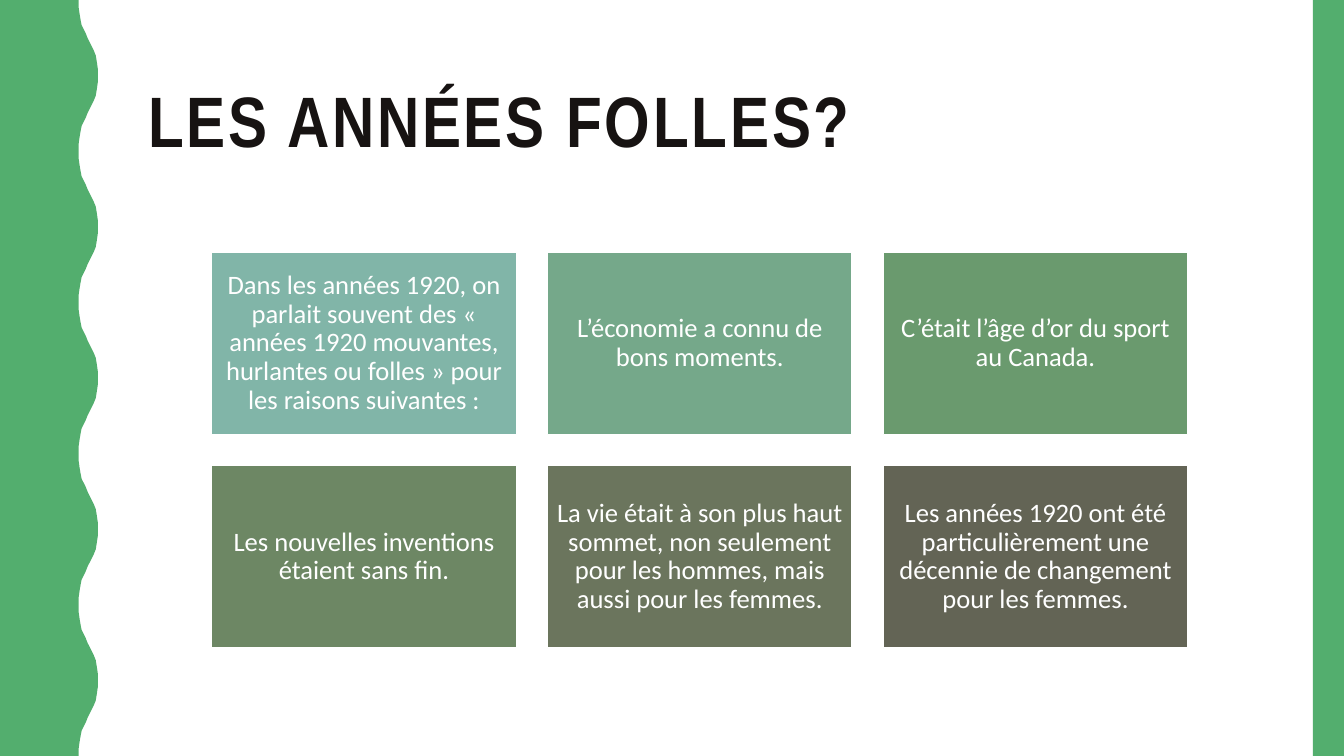
import dataclasses

import pptx
import pptx.dml.color
import pptx.enum.shapes
import pptx.enum.text
import pptx.util

PX = 9144  # EMU per px, 100 px to the inch
SLIDE_WIDTH, SLIDE_HEIGHT = 1333, 750

COLORS = {
    "white": "FFFFFF",
    "ink": "171312",
    "green": "53AE6E",
    "card_1": "81B5A8",
    "card_2": "75A88A",
    "card_3": "6A9A6E",
    "card_4": "6D8764",
    "card_5": "6B755D",
    "card_6": "636455",
}

# Card grid
COLUMNS = 3
CARD_LEFT, CARD_TOP = 210, 250
CARD_WIDTH, CARD_HEIGHT = 302, 181
CARD_GAP = 31
CARD_INSET = 8

# Wavy edge: (x, y) points from trough to crest, mirrored for the way back
WAVE_COUNT = 5
WAVE_PERIOD = 150
HALF_WAVE = [
    (78, 0), (78, 7), (79, 14), (80, 20), (81, 25), (83, 29), (85, 33), (87, 38),
    (89, 42), (91, 46), (93, 50), (95, 55), (96, 61), (97, 68), (97, 75),
]


@dataclasses.dataclass(frozen=True)
class Card:
    text: str
    color: str


CARDS = [
    Card("Dans les années 1920, on parlait souvent des « années 1920 mouvantes, "
         "hurlantes ou folles » pour les raisons suivantes :", "card_1"),
    Card("L’économie a connu de bons moments.", "card_2"),
    Card("C’était l’âge d’or du sport au Canada.", "card_3"),
    Card("Les nouvelles inventions étaient sans fin.", "card_4"),
    Card("La vie était à son plus haut sommet, non seulement pour les hommes, "
         "mais aussi pour les femmes.", "card_5"),
    Card("Les années 1920 ont été particulièrement une décennie de changement "
         "pour les femmes.", "card_6"),
]


def px(length: int) -> pptx.util.Emu:
    return pptx.util.Emu(length * PX)


def rgb(name: str) -> pptx.dml.color.RGBColor:
    return pptx.dml.color.RGBColor.from_string(COLORS[name])


def paint(shape, color: str) -> None:
    shape.shadow.inherit = False
    shape.fill.solid()
    shape.fill.fore_color.rgb = rgb(color)
    shape.line.fill.background()


def add_rectangle(slide, left: int, top: int, width: int, height: int, color: str):
    shape = slide.shapes.add_shape(
        pptx.enum.shapes.MSO_SHAPE.RECTANGLE, px(left), px(top), px(width), px(height))
    paint(shape, color)
    return shape


def write(shape, text: str, font_name: str, size: int, color: str, alignment):
    frame = shape.text_frame
    frame.word_wrap = True
    frame.auto_size = pptx.enum.text.MSO_AUTO_SIZE.NONE
    frame.vertical_anchor = pptx.enum.text.MSO_ANCHOR.MIDDLE
    paragraph = frame.paragraphs[0]
    paragraph.alignment = alignment
    paragraph.line_spacing = 0.9
    run = paragraph.add_run()
    run.text = text
    run.font.name = font_name
    run.font.size = pptx.util.Pt(size)
    run.font.color.rgb = rgb(color)
    return run


def add_title(slide, text: str) -> None:
    title = slide.shapes.title
    title.left, title.top, title.width, title.height = px(137), px(42), px(1113), px(163)
    run = write(title, text, "Arial Narrow", 51, "ink", pptx.enum.text.PP_ALIGN.LEFT)
    run.font.bold = True
    run.font._element.set("spc", "200")  # letter spacing, hundredths of a point


def add_wavy_band(slide) -> None:
    wave = HALF_WAVE + [(x, WAVE_PERIOD - y) for x, y in reversed(HALF_WAVE[:-1])]
    edge = [(x, y + WAVE_PERIOD * i) for i in range(WAVE_COUNT) for x, y in wave]
    builder = slide.shapes.build_freeform(0, 0, scale=PX)
    builder.add_line_segments(edge + [(0, SLIDE_HEIGHT)], close=True)
    paint(builder.convert_to_shape(), "green")


def add_card(slide, card: Card, index: int) -> None:
    row, column = divmod(index, COLUMNS)
    shape = add_rectangle(
        slide,
        CARD_LEFT + column * (CARD_WIDTH + CARD_GAP),
        CARD_TOP + row * (CARD_HEIGHT + CARD_GAP),
        CARD_WIDTH, CARD_HEIGHT, card.color)
    shape.line.color.rgb = rgb("white")
    shape.line.width = pptx.util.Pt(1)
    frame = shape.text_frame
    frame.margin_left = frame.margin_right = px(CARD_INSET)
    frame.margin_top = frame.margin_bottom = px(CARD_INSET)
    write(shape, card.text, "Calibri", 19, "white", pptx.enum.text.PP_ALIGN.CENTER)


def main() -> None:
    presentation = pptx.Presentation()
    presentation.slide_width = px(SLIDE_WIDTH)
    presentation.slide_height = px(SLIDE_HEIGHT)
    slide = presentation.slides.add_slide(presentation.slide_layouts[5])
    slide.background.fill.solid()
    slide.background.fill.fore_color.rgb = rgb("white")

    # Title
    add_title(slide, "LES ANNÉES FOLLES?")

    # Side bands
    add_wavy_band(slide)
    add_rectangle(slide, 1302, 0, 31, SLIDE_HEIGHT, "green")

    # Cards
    for index, card in enumerate(CARDS):
        add_card(slide, card, index)

    presentation.save("out.pptx")


if __name__ == "__main__":
    main()
